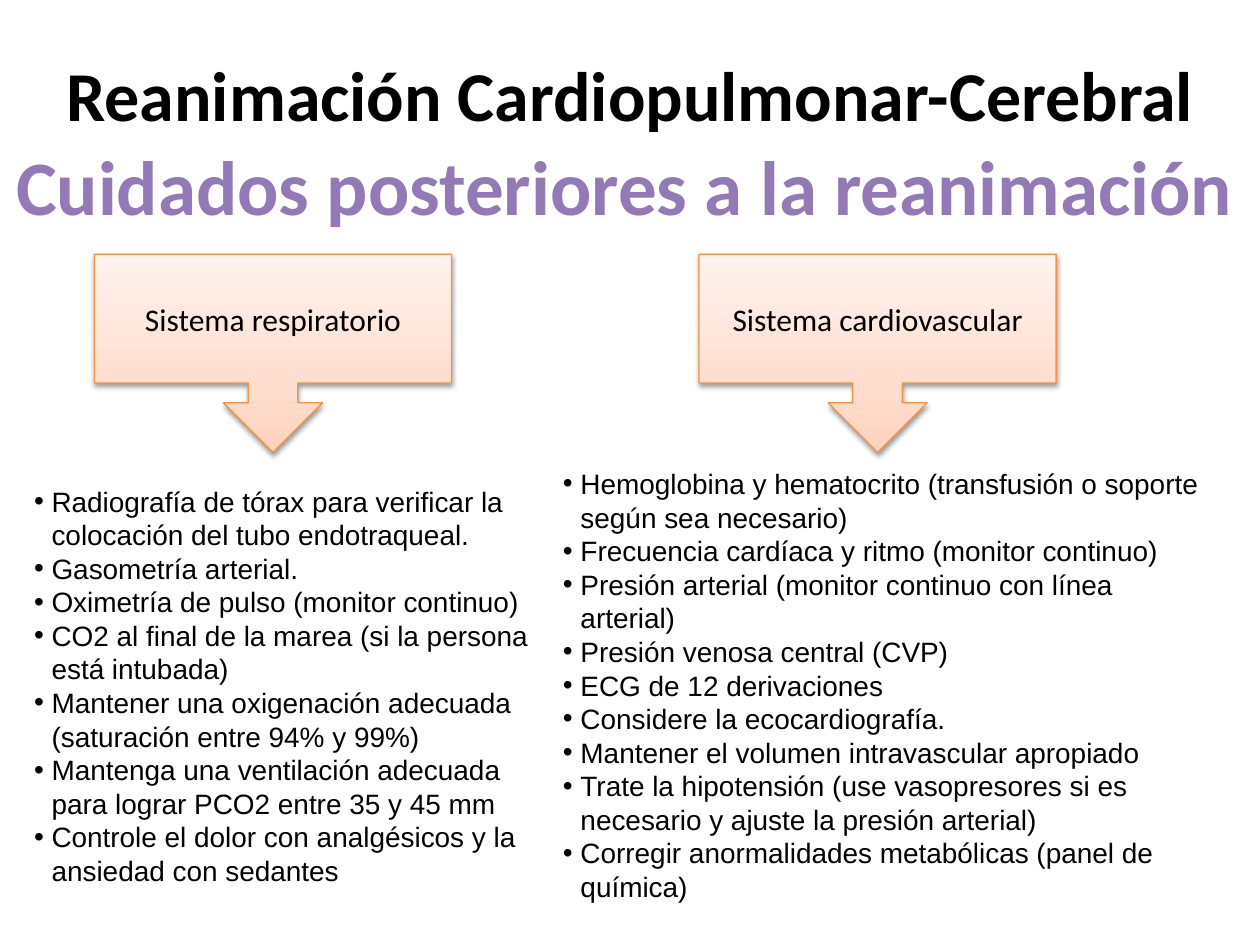
from lxml import etree
from pptx import Presentation
from pptx.dml.color import RGBColor
from pptx.enum.shapes import MSO_SHAPE
from pptx.enum.text import MSO_ANCHOR, MSO_AUTO_SIZE, PP_ALIGN
from pptx.oxml.ns import qn
from pptx.util import Pt

CALLOUT = MSO_SHAPE.DOWN_ARROW_CALLOUT
TOP, MIDDLE = MSO_ANCHOR.TOP, MSO_ANCHOR.MIDDLE
CENTER, LEFT = PP_ALIGN.CENTER, PP_ALIGN.LEFT
NO_AUTOFIT = MSO_AUTO_SIZE.NONE
TWO_CONTENT = 3

COLORS = {
    "text": "000000",
    "callout_line": "F69240",
    "callout_deep": "FFD2BD",
    "callout_mid": "FFDED0",
    "callout_pale": "FFF2ED",
    "purple": "9379B5",
    "purple_pale": "B099D2",
}
CALLOUT_STOPS = [(0, "callout_deep"), (35, "callout_mid"), (100, "callout_pale")]
PURPLE_STOPS = [(0, "purple_pale"), (40, "purple"), (50, "purple"),
                (68, "purple"), (100, "purple_pale")]

RESPIRATORY_CARE = [
    "Radiografía de tórax para verificar la colocación del tubo endotraqueal.",
    "Gasometría arterial.",
    "Oximetría de pulso (monitor continuo)",
    "CO2 al final de la marea (si la persona está intubada)",
    "Mantener una oxigenación adecuada (saturación entre 94% y 99%)",
    "Mantenga una ventilación adecuada para lograr PCO2 entre 35 y 45 mm",
    "Controle el dolor con analgésicos y la ansiedad con sedantes",
]
CARDIOVASCULAR_CARE = [
    "Hemoglobina y hematocrito (transfusión o soporte según sea necesario)",
    "Frecuencia cardíaca y ritmo (monitor continuo)",
    "Presión arterial (monitor continuo con línea arterial)",
    "Presión venosa central (CVP)",
    "ECG de 12 derivaciones",
    "Considere la ecocardiografía.",
    "Mantener el volumen intravascular apropiado",
    "Trate la hipotensión (use vasopresores si es necesario y ajuste la presión arterial)",
    "Corregir anormalidades metabólicas (panel de química)",
]


def set_gradient(fill, owner, stops, angle):
    """Give fill, which lives in the XML element owner, any number of stops."""
    fill.gradient()
    fill.gradient_angle = angle
    stop_list = owner.find(".//" + qn("a:gsLst"))
    for old_stop in list(stop_list):
        stop_list.remove(old_stop)
    for percent, color in stops:
        stop = etree.SubElement(stop_list, qn("a:gs"), pos=str(percent * 1000))
        etree.SubElement(stop, qn("a:srgbClr"), val=COLORS[color])


def add_soft_shadow(shape):
    shape.shadow.inherit = False
    effects = shape._element.spPr.find(qn("a:effectLst"))
    shadow = etree.SubElement(effects, qn("a:outerShdw"), blurRad=str(Pt(3.1)),
                              dist=str(Pt(1.6)), dir="5400000", rotWithShape="0")
    black = etree.SubElement(shadow, qn("a:srgbClr"), val=COLORS["text"])
    etree.SubElement(black, qn("a:alpha"), val="38000")


def add_bullet(paragraph, indent):
    properties = paragraph._p.get_or_add_pPr()
    properties.set("marL", str(Pt(indent)))
    properties.set("indent", str(-Pt(indent)))
    etree.SubElement(properties, qn("a:buChar"), char="•")


class CareSlide:
    heading_font = "Calibri"
    list_font = "Arial"

    def __init__(self, slide):
        self.slide = slide

    def place(self, shape, box):
        shape.left, shape.top, shape.width, shape.height = map(Pt, box)

    def style(self, paragraph, font_name, size, bold=False, align=CENTER):
        paragraph.alignment = align
        font = paragraph.font
        font.name, font.size, font.bold = font_name, Pt(size), bold
        font.color.rgb = RGBColor.from_string(COLORS["text"])

    def heading(self, shape, text, size):
        frame = shape.text_frame
        frame.text = text
        frame.word_wrap = False
        frame.auto_size = NO_AUTOFIT
        frame.vertical_anchor = TOP
        self.style(frame.paragraphs[0], self.heading_font, size, bold=True)
        return frame.paragraphs[0].runs[0]

    def title(self, text, box):
        title = self.slide.shapes.title
        self.place(title, box)
        self.heading(title, text, 40)

    def subtitle(self, text, box):
        subtitle = self.slide.shapes.add_textbox(*map(Pt, box))
        run = self.heading(subtitle, text, 44)
        set_gradient(run.font.fill, run._r, PURPLE_STOPS, 270)

    def callout(self, text, box):
        callout = self.slide.shapes.add_shape(CALLOUT, *map(Pt, box))
        set_gradient(callout.fill, callout._element.spPr, CALLOUT_STOPS, 90)
        callout.line.color.rgb = RGBColor.from_string(COLORS["callout_line"])
        callout.line.width = Pt(0.75)
        add_soft_shadow(callout)
        frame = callout.text_frame
        frame.text = text
        frame.vertical_anchor = MIDDLE
        self.style(frame.paragraphs[0], self.heading_font, 18)

    def care_list(self, placeholder_index, items, box):
        body = self.slide.placeholders[placeholder_index]
        self.place(body, box)
        frame = body.text_frame
        frame.text = "\n".join(items)
        frame.word_wrap = True
        frame.auto_size = NO_AUTOFIT
        frame.vertical_anchor = TOP
        for paragraph in frame.paragraphs:
            paragraph.space_before = Pt(0)
            add_bullet(paragraph, 10)
            self.style(paragraph, self.list_font, 16, align=LEFT)


def main():
    deck = Presentation()
    deck.slide_width, deck.slide_height = Pt(720), Pt(540)
    layout = deck.slide_layouts[TWO_CONTENT]
    care = CareSlide(deck.slides.add_slide(layout))

    care.title("Reanimación Cardiopulmonar-Cerebral", (26.5, 26, 667, 55.5))
    care.subtitle("Cuidados posteriores a la reanimación", (-1, 75.5, 716.5, 60.5))

    systems = [
        ("Sistema respiratorio", 54, 1, RESPIRATORY_CARE, (12.25, 273, 312, 240)),
        ("Sistema cardiovascular", 399.5, 2, CARDIOVASCULAR_CARE,
         (314.5, 263, 379, 259)),
    ]
    for name, callout_left, placeholder_index, items, list_box in systems:
        care.callout(name, (callout_left, 145.25, 204, 113.25))
        care.care_list(placeholder_index, items, list_box)

    deck.save("out.pptx")


if __name__ == "__main__":
    main()
